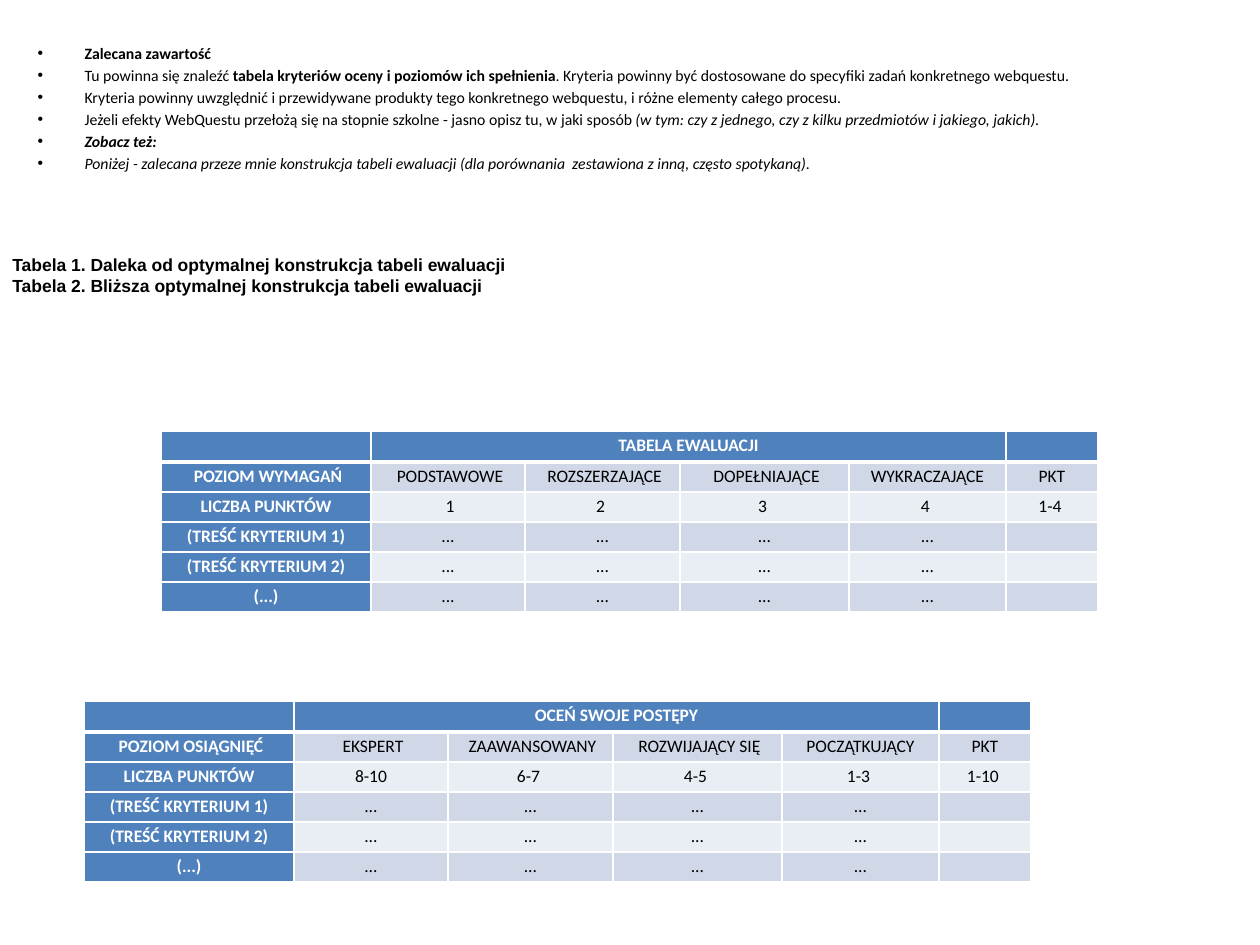
from lxml import etree
from pptx import Presentation
from pptx import util as u
from pptx.dml.color import RGBColor
from pptx.enum import shapes, text
from pptx.oxml.ns import qn

SCALE = 914400 / 126
BLACK = RGBColor(0, 0, 0)
WHITE = RGBColor(0xFF, 0xFF, 0xFF)
BLUE = RGBColor(0x4F, 0x81, 0xBD)
BANDS = RGBColor(0xE9, 0xED, 0xF4), RGBColor(0xD0, 0xD8, 0xE8)

NOTES = [
    [("Zalecana zawartość", "b")],
    [("Tu powinna się znaleźć ", ""),
     ("tabela kryteriów oceny i poziomów ich spełnienia", "b"),
     (". Kryteria powinny być dostosowane do specyfiki zadań konkretnego webquestu.", "")],
    [("Kryteria powinny uwzględnić i przewidywane produkty tego konkretnego webquestu, "
      "i różne elementy całego procesu.", "")],
    [("Jeżeli efekty WebQuestu przełożą się na stopnie szkolne - jasno opisz tu, w jaki sposób ", ""),
     ("(w tym: czy z jednego, czy z kilku przedmiotów i jakiego, jakich)", "i"),
     (".", "")],
    [("Zobacz też:", "bi")],
    [("Poniżej - zalecana przeze mnie konstrukcja tabeli ewaluacji "
      "(dla porównania  zestawiona z inną, często spotykaną). ", "i")],
]
CAPTIONS = [
    "Tabela 1. Daleka od optymalnej konstrukcja tabeli ewaluacji",
    "Tabela 2. Bliższa optymalnej konstrukcja tabeli ewaluacji",
]
CRITERIA = [[name] + ["..."] * 4 + [""]
            for name in ("(TREŚĆ KRYTERIUM 1)", "(TREŚĆ KRYTERIUM 2)", "(...)")]
REQUIREMENTS = [
    ["", "TABELA EWALUACJI", "", "", "", ""],
    [" POZIOM WYMAGAŃ", " PODSTAWOWE", " ROZSZERZAJĄCE", " DOPEŁNIAJĄCE", "WYKRACZAJĄCE", "PKT"],
    ["LICZBA PUNKTÓW", " 1", "2 ", "3 ", "4 ", "1-4 "],
] + CRITERIA
PROGRESS = [
    ["", "OCEŃ SWOJE POSTĘPY", "", "", "", ""],
    [" POZIOM OSIĄGNIĘĆ", " EKSPERT", " ZAAWANSOWANY", " ROZWIJAJĄCY SIĘ", "POCZĄTKUJĄCY", "PKT"],
    ["LICZBA PUNKTÓW", "8-10", "6-7 ", "4-5 ", "1-3 ", "1-10 "],
] + CRITERIA


def px(n):
    return u.Emu(round(n * SCALE))


def write(p, words, size=10, font="Calibri", color=BLACK, bold=False, italic=False):
    r = p.add_run()
    r.text = words
    r.font.size = u.Pt(size)
    r.font.name = font
    r.font.color.rgb = color
    r.font.bold = bold
    r.font.italic = italic


def paragraphs(tf, count):
    return [tf.paragraphs[0]] + [tf.add_paragraph() for _ in range(count - 1)]


def add_notes(s, x, y, w, h):
    body = s.placeholders[1]
    body.left, body.top, body.width, body.height = map(px, (x, y, w, h))
    tf = body.text_frame
    for p, parts in zip(paragraphs(tf, len(NOTES)), NOTES):
        pPr = p._p.get_or_add_pPr()
        pPr.set("marL", str(px(47)))
        pPr.set("indent", str(-px(47)))
        for words, style in parts:
            write(p, words, size=9, bold="b" in style, italic="i" in style)


def add_captions(s, x, y, w, h):
    sp = s.shapes.add_shape(shapes.MSO_SHAPE.RECTANGLE, *map(px, (x, y, w, h)))
    sp.shadow.inherit = False
    sp.fill.solid()
    sp.fill.fore_color.rgb = WHITE
    sp.line.fill.background()
    tf = sp.text_frame
    tf.word_wrap = False
    tf.auto_size = text.MSO_AUTO_SIZE.SHAPE_TO_FIT_TEXT
    tf.vertical_anchor = text.MSO_ANCHOR.MIDDLE
    for p, words in zip(paragraphs(tf, len(CAPTIONS)), CAPTIONS):
        p.alignment = text.PP_ALIGN.LEFT
        write(p, words, font="Arial", bold=True)


def add_borders(cell, bottom):
    tcPr = cell._tc.get_or_add_tcPr()
    for i, (side, width) in enumerate(zip("LRTB", (1, 1, 1, bottom))):
        ln = etree.Element(qn(f"a:ln{side}"), w=str(u.Pt(width)))
        fill = etree.SubElement(ln, qn("a:solidFill"))
        etree.SubElement(fill, qn("a:srgbClr"), val=str(WHITE))
        tcPr.insert(i, ln)


def format_cell(cell, words, row, col):
    head = row == 0 or col == 0
    cell.fill.solid()
    cell.fill.fore_color.rgb = BLUE if head else BANDS[row % 2]
    cell.margin_left = cell.margin_right = cell.margin_top = cell.margin_bottom = px(1)
    add_borders(cell, bottom=3 if row == 0 else 1)
    p = cell.text_frame.paragraphs[0]
    p.alignment = text.PP_ALIGN.CENTER
    p.line_spacing = 1.15
    if words:
        write(p, words, color=WHITE if head else BLACK, bold=head)
    else:
        etree.SubElement(p._p, qn("a:endParaRPr"), sz="1000")


def add_rubric(s, x, y, widths, rows):
    heights = [31] + [30] * (len(rows) - 1)
    frame = s.shapes.add_table(len(rows), len(widths), px(x), px(y),
                               px(sum(widths)), px(sum(heights)))
    table = frame.table
    for column, w in zip(table.columns, widths):
        column.width = px(w)
    for line, h in zip(table.rows, heights):
        line.height = px(h)
    for i, line in enumerate(rows):
        for j, words in enumerate(line):
            format_cell(table.cell(i, j), words, i, j)
    table.cell(0, 1).merge(table.cell(0, 4))


def main():
    prs = Presentation()
    prs.slide_width, prs.slide_height = px(1260), px(945)
    s = prs.slides.add_slide(prs.slide_layouts[1])
    title = s.shapes.title._element
    title.getparent().remove(title)
    add_notes(s, 25, 37, 1134, 624)
    add_rubric(s, 161, 431, [210, 154, 155, 169, 157, 92], REQUIREMENTS)
    add_rubric(s, 84, 701, [210, 154, 165, 169, 157, 92], PROGRESS)
    add_captions(s, 0, 244, 1260, 63)
    prs.save("out.pptx")


if __name__ == "__main__":
    main()
